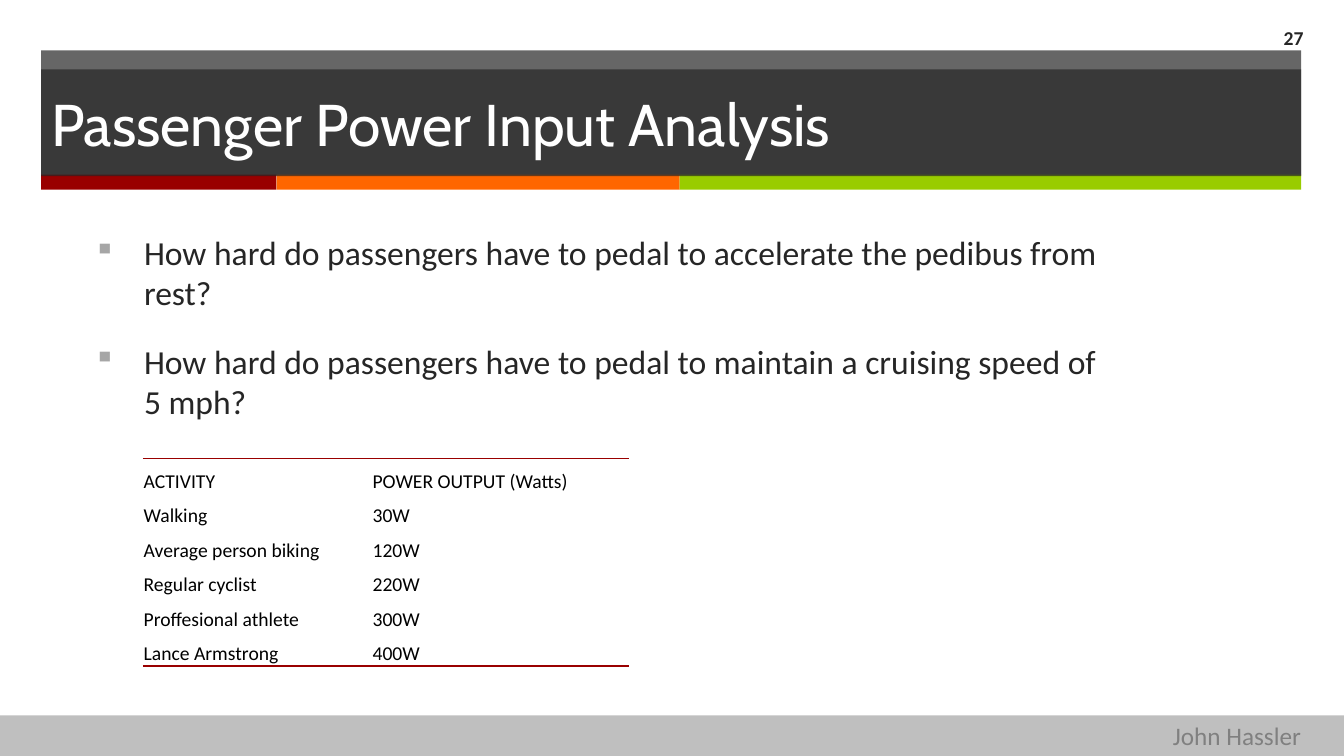
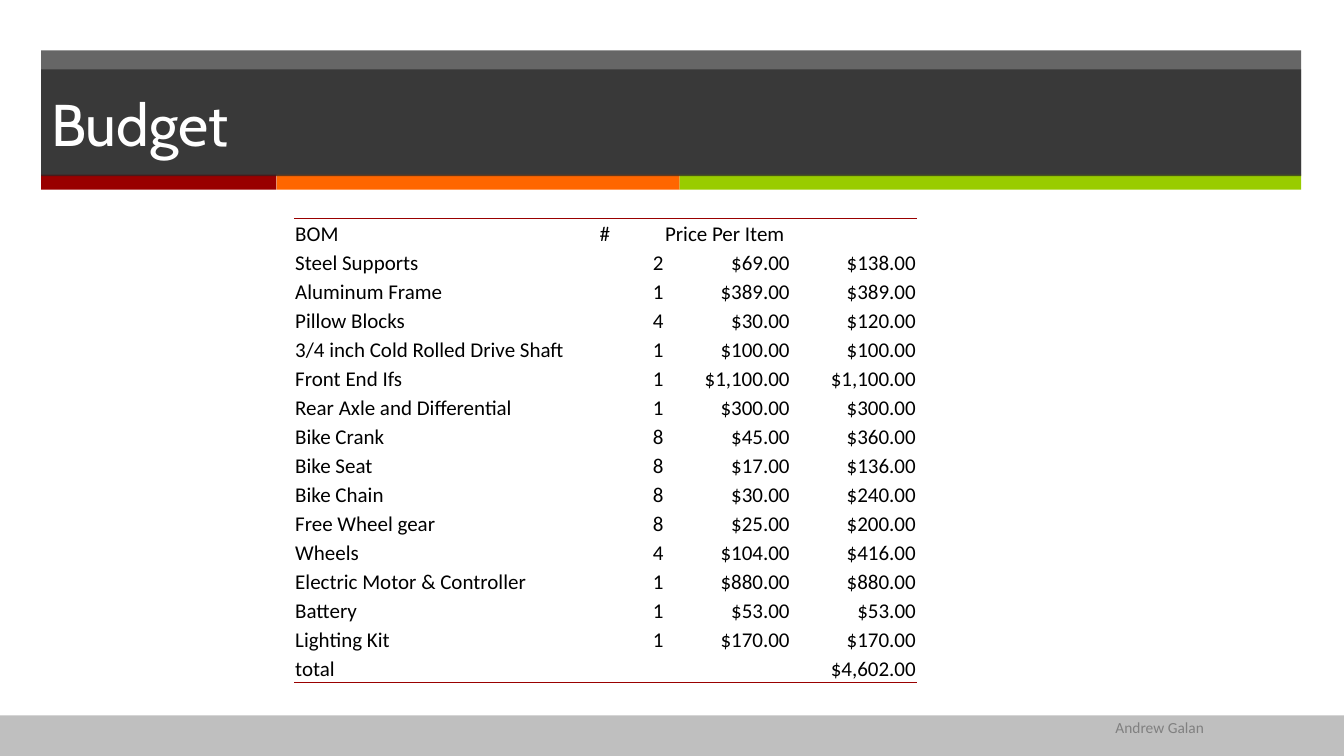
"""Build the power analysis and budget slides."""
import pptx
import pptx.dml.color
import pptx.enum.shapes
import pptx.enum.text
import pptx.oxml.ns
import pptx.util
from lxml import etree

Cm, Pt = pptx.util.Cm, pptx.util.Pt
RGBColor = pptx.dml.color.RGBColor
ALIGN, ANCHOR = pptx.enum.text.PP_ALIGN, pptx.enum.text.MSO_ANCHOR
qn = pptx.oxml.ns.qn

WHITE = RGBColor(0xFF, 0xFF, 0xFF)
BLACK = RGBColor(0x00, 0x00, 0x00)
DARK = RGBColor(0x26, 0x26, 0x26)
GRAY = RGBColor(0x80, 0x80, 0x80)
BULLET = RGBColor(0xA6, 0xA6, 0xA6)
FOOTER = RGBColor(0xBF, 0xBF, 0xBF)
RED = RGBColor(0x99, 0x00, 0x00)
ORANGE = RGBColor(0xFF, 0x66, 0x00)
GREEN = RGBColor(0x99, 0xCC, 0x00)

TITLE_FONT, BODY_FONT = "Cabin", "Calibri"
NO_STYLE = "{2D5ABB26-0587-4C30-8999-92F81FD0307C}"
WIDTH, HEIGHT = 33.87, 19.05
BAND_LEFT, BAND_WIDTH = 1.04, 31.75
STRIPES = [(5.93, RED), (10.16, ORANGE), (15.66, GREEN)]

QUESTIONS = [
    "How hard do passengers have to pedal to accelerate the pedibus from rest?",
    "How hard do passengers have to pedal to maintain a cruising speed of 5 mph?",
]
POWER = [
    ("ACTIVITY", "POWER OUTPUT (Watts)"),
    ("Walking", "30W"),
    ("Average person biking", "120W"),
    ("Regular cyclist", "220W"),
    ("Proffesional athlete", "300W"),
    ("Lance Armstrong", "400W"),
]
PARTS = [
    ("Steel Supports", 2, 69),
    ("Aluminum Frame", 1, 389),
    ("Pillow Blocks", 4, 30),
    ("3/4 inch Cold Rolled Drive Shaft", 1, 100),
    ("Front End Ifs", 1, 1100),
    ("Rear Axle and Differential", 1, 300),
    ("Bike Crank", 8, 45),
    ("Bike Seat", 8, 17),
    ("Bike Chain", 8, 30),
    ("Free Wheel gear", 8, 25),
    ("Wheels", 4, 104),
    ("Electric Motor & Controller", 1, 880),
    ("Battery", 1, 53),
    ("Lighting Kit", 1, 170),
]


def add_xml(parent, tag, **attributes):
    return etree.SubElement(parent, qn(tag), **attributes)


def style_text(tf, size, color, font=BODY_FONT, bold=False, align=ALIGN.LEFT):
    for p in tf.paragraphs:
        p.alignment = align
        for r in p.runs:
            r.font.name, r.font.size, r.font.bold = font, Pt(size), bold
            r.font.color.rgb = color


def add_rect(s, left, top, width, height, color, alpha=None):
    sp = s.shapes.add_shape(pptx.enum.shapes.MSO_SHAPE.RECTANGLE,
                            Cm(left), Cm(top), Cm(width), Cm(height))
    sp.shadow.inherit = False
    sp.line.fill.background()
    sp.fill.solid()
    sp.fill.fore_color.rgb = color
    if alpha:
        add_xml(sp._element.spPr.find(".//" + qn("a:srgbClr")), "a:alpha", val=str(alpha * 1000))
    return sp


def add_text(s, left, top, width, height, text, size, color, wrap=True, **style):
    tf = s.shapes.add_textbox(Cm(left), Cm(top), Cm(width), Cm(height)).text_frame
    tf.word_wrap = wrap
    tf.text = text
    style_text(tf, size, color, **style)
    return tf


def add_slide(prs, title):
    s = prs.slides.add_slide(prs.slide_layouts[6])
    add_rect(s, 0, 18.03, WIDTH, 1.02, FOOTER)
    add_rect(s, BAND_LEFT, 1.27, BAND_WIDTH, 3.15, DARK, 70)
    left = BAND_LEFT
    for width, color in STRIPES:
        add_rect(s, left, 4.4, width, 0.38, color)
        left += width
    tf = add_rect(s, BAND_LEFT, 1.75, BAND_WIDTH, 2.69, DARK, 70).text_frame
    tf.text = title
    tf.vertical_anchor = ANCHOR.MIDDLE
    style_text(tf, 42, WHITE, TITLE_FONT)
    return s


def add_bullets(tf):
    for p in tf.paragraphs:
        p.space_before = Pt(20)
        props = p._p.get_or_add_pPr()
        props.set("marL", str(Cm(1.27)))
        props.set("indent", str(-Cm(1.27)))
        add_xml(add_xml(props, "a:buClr"), "a:srgbClr", val=str(BULLET))
        add_xml(props, "a:buSzPct", val="90000")
        add_xml(props, "a:buChar", char="▪")


def add_rule(cell, side):
    line = etree.Element(qn(side), w=str(Pt(1)))
    add_xml(add_xml(line, "a:solidFill"), "a:srgbClr", val=str(RED))
    cell._tc.get_or_add_tcPr().insert(0, line)


def add_ruled_table(s, left, top, widths, row_height, rows, size, right_from):
    frame = s.shapes.add_table(len(rows), len(widths), Cm(left), Cm(top),
                               Cm(sum(widths)), Cm(row_height * len(rows)))
    table = frame.table
    table.first_row = table.horz_banding = False
    table._tbl.tblPr.find(qn("a:tableStyleId")).text = NO_STYLE
    for column, width in zip(table.columns, widths):
        column.width = Cm(width)
    for i, row in enumerate(rows):
        table.rows[i].height = Cm(row_height)
        for j, text in enumerate(row):
            cell = table.cell(i, j)
            cell.fill.background()
            cell.margin_left = cell.margin_right = cell.margin_top = Cm(0.02)
            cell.margin_bottom = 0
            cell.vertical_anchor = ANCHOR.BOTTOM
            cell.text = text
            align = ALIGN.RIGHT if i and j >= right_from else ALIGN.LEFT
            style_text(cell.text_frame, size, BLACK, align=align)
            if not text:
                add_xml(cell.text_frame.paragraphs[0]._p, "a:endParaRPr", sz=str(size * 100))
            if i == 0:
                add_rule(cell, "a:lnT")
            elif i == len(rows) - 1:
                add_rule(cell, "a:lnB")
    return table


def money(amount):
    return f"${amount:,.2f}"


def budget_rows():
    rows = [("BOM", "", "#", "Price Per Item", "")]
    rows += [(part, "", str(count), money(price), money(count * price))
             for part, count, price in PARTS]
    total = sum(count * price for _, count, price in PARTS)
    return rows + [("total", "", "", "", money(total))]


def main():
    prs = pptx.Presentation()
    prs.slide_width, prs.slide_height = Cm(WIDTH), Cm(HEIGHT)

    s = add_slide(prs, "Passenger Power Input Analysis")
    add_bullets(add_text(s, 2.11, 5.72, 26.21, 11.1, "\n".join(QUESTIONS), 24, DARK))
    number = add_text(s, 30.76, 0.46, 2.34, 0.99, "27", 14, DARK, bold=True, align=ALIGN.RIGHT)
    number.vertical_anchor = ANCHOR.MIDDLE
    add_ruled_table(s, 3.6, 11.56, [5.77, 6.48], 0.87, POWER, 14, right_from=2)
    add_text(s, 29.31, 18.03, 3.78, 1.02, "John Hassler", 18, GRAY, wrap=False)

    s = add_slide(prs, "Budget")
    add_text(s, 27.86, 17.96, 3.51, 0.74, "Andrew Galan", 11, GRAY)
    table = add_ruled_table(s, 7.42, 5.51, [7.26, 0.41, 1.65, 3.18, 3.18], 0.73,
                            budget_rows(), 15, right_from=2)
    table.cell(0, 3).merge(table.cell(0, 4))

    prs.save("out.pptx")


if __name__ == "__main__":
    main()
